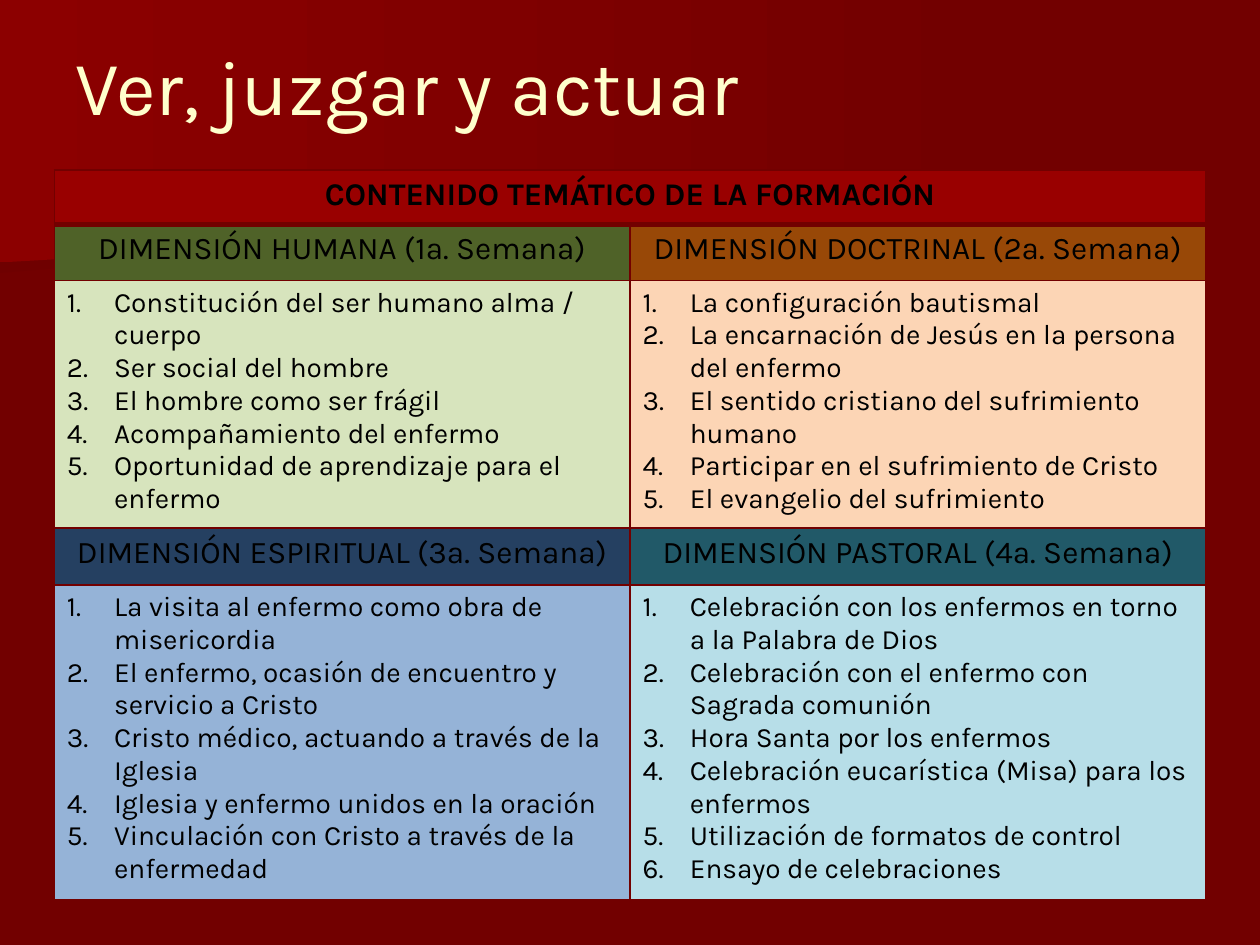
from dataclasses import dataclass

from lxml.etree import SubElement
from pptx import Presentation
from pptx.dml.color import RGBColor as RGB
from pptx.enum.text import MSO_ANCHOR as Anchor, PP_ALIGN as Align
from pptx.oxml.ns import qn
from pptx.util import Pt


@dataclass(frozen=True)
class Theme:
    font: str = "Karla"
    back: str = "720000"
    glow: str = "8C0000"
    dusk: str = "6F0000"
    title: str = "FFFFCC"
    ink: str = "000000"
    banner: str = "990000"
    big: int = 44
    head: int = 18
    body: int = 16
    thin: int = 1
    thick: int = 3
    indent: int = 27


BANNER = "CONTENIDO TEMÁTICO DE LA FORMACIÓN"

# heading, heading fill, list fill, topics
PARTS = [
    ("DIMENSIÓN HUMANA (1ª. Semana)", "4F6228", "D7E4BD", [
        "Constitución del ser humano alma / cuerpo",
        "Ser social del hombre",
        "El hombre como ser frágil",
        "Acompañamiento del enfermo",
        "Oportunidad de aprendizaje para el enfermo"]),
    ("DIMENSIÓN DOCTRINAL (2ª. Semana)", "984807", "FCD5B5", [
        "La configuración bautismal",
        "La encarnación de Jesús en la persona del enfermo",
        "El sentido cristiano del sufrimiento humano",
        "Participar en el sufrimiento de Cristo",
        "El evangelio del sufrimiento"]),
    ("DIMENSIÓN ESPIRITUAL (3ª. Semana)", "254061", "95B3D7", [
        "La visita al enfermo como obra de misericordia",
        "El enfermo, ocasión de encuentro y servicio a Cristo",
        "Cristo médico, actuando a través de la Iglesia",
        "Iglesia y enfermo unidos en la oración",
        "Vinculación con Cristo a través de la enfermedad"]),
    ("DIMENSIÓN PASTORAL (4ª. Semana)", "215968", "B7DEE8", [
        "Celebración con los enfermos en torno a la Palabra de Dios",
        "Celebración con el enfermo con Sagrada comunión",
        "Hora Santa por los enfermos",
        "Celebración eucarística (Misa) para los enfermos",
        "Utilización de formatos de control",
        "Ensayo de celebraciones"]),
]


def write(frame, *lines, size, color, font, bold=False, align=Align.LEFT, indent=0):
    """Fill a text frame, one paragraph a line; an indent makes it a numbered list."""
    for i, line in enumerate(lines):
        para = frame.add_paragraph() if i else frame.paragraphs[0]
        para.alignment = align
        run = para.add_run()
        run.text = line
        run.font.name, run.font.size, run.font.bold = font, Pt(size), bold
        run.font.color.rgb = RGB.from_string(color)
        if indent:
            props = para._p.get_or_add_pPr()
            props.set("marL", str(Pt(indent)))
            props.set("indent", str(-Pt(indent)))
            SubElement(props, qn("a:buFont"), typeface="+mj-lt")
            SubElement(props, qn("a:buAutoNum"), type="arabicPeriod")


def edge(cell, side, color, width):
    line = SubElement(cell._tc.get_or_add_tcPr(), qn(f"a:ln{side}"), w=str(Pt(width)))
    fill = SubElement(line, qn("a:solidFill"))
    SubElement(fill, qn("a:srgbClr"), val=color)


class Page:
    def __init__(self, deck, theme):
        self.theme = theme
        self.slide = deck.slides.add_slide(deck.slide_layouts[6])
        fill = self.slide.background.fill
        fill.solid()
        fill.fore_color.rgb = RGB.from_string(theme.back)

    def beam(self, points, color):
        """Draw a background polygon that fades from color into the background."""
        start, *rest = [(Pt(x), Pt(y)) for x, y in points]
        pen = self.slide.shapes.build_freeform(*start)
        pen.add_line_segments(rest)
        shape = pen.convert_to_shape()
        shape.shadow.inherit = False
        shape.line.fill.background()
        shape.fill.gradient()
        shape.fill.gradient_angle = 0
        for stop, tint in zip(shape.fill.gradient_stops, (color, self.theme.back)):
            stop.color.rgb = RGB.from_string(tint)

    def title(self, text, x, y, w, h):
        frame = self.slide.shapes.add_textbox(Pt(x), Pt(y), Pt(w), Pt(h)).text_frame
        frame.word_wrap = True
        frame.vertical_anchor = Anchor.MIDDLE
        write(frame, text, size=self.theme.big, color=self.theme.title,
              font=self.theme.font)

    def grid(self, x, y, w, rows, cols):
        table = self.slide.shapes.add_table(
            len(rows), cols, Pt(x), Pt(y), Pt(w), Pt(sum(rows))).table
        for row, high in zip(table.rows, rows):
            row.height = Pt(high)
        return table

    def cell(self, cell, fill, *lines, top=None, base=None, **form):
        look = self.theme
        for side, width in zip("LRTB", (None, None, top, base)):
            edge(cell, side, look.back, width or look.thin)
        cell.fill.solid()
        cell.fill.fore_color.rgb = RGB.from_string(fill)
        write(cell.text_frame, *lines, color=look.ink, font=look.font, **form)


def main():
    look = Theme()
    deck = Presentation()
    deck.slide_width, deck.slide_height = Pt(720), Pt(540)
    page = Page(deck, look)

    page.beam([(560, 110), (0, 156), (0, 73), (561, 73), (560, 92)], look.dusk)
    page.beam([(570, 117), (0, 150), (0, 0), (570, 0)], look.glow)
    page.title("Ver, juzgar y actuar", 36, 3.6, 648, 90)

    table = page.grid(31, 97.2, 658, [31, 32, 137.5, 32.5, 180], 2)
    table.cell(0, 0).merge(table.cell(0, 1))
    page.cell(table.cell(0, 0), look.banner, BANNER, base=look.thick,
              size=look.head, bold=True, align=Align.CENTER)
    for i, (name, dark, light, topics) in enumerate(PARTS):
        row, col = 1 + i // 2 * 2, i % 2
        page.cell(table.cell(row, col), dark, name, size=look.head,
                  align=Align.CENTER, top=look.thick if row == 1 else None)
        page.cell(table.cell(row + 1, col), light, *topics, size=look.body,
                  indent=look.indent)

    deck.save("out.pptx")


if __name__ == "__main__":
    main()
